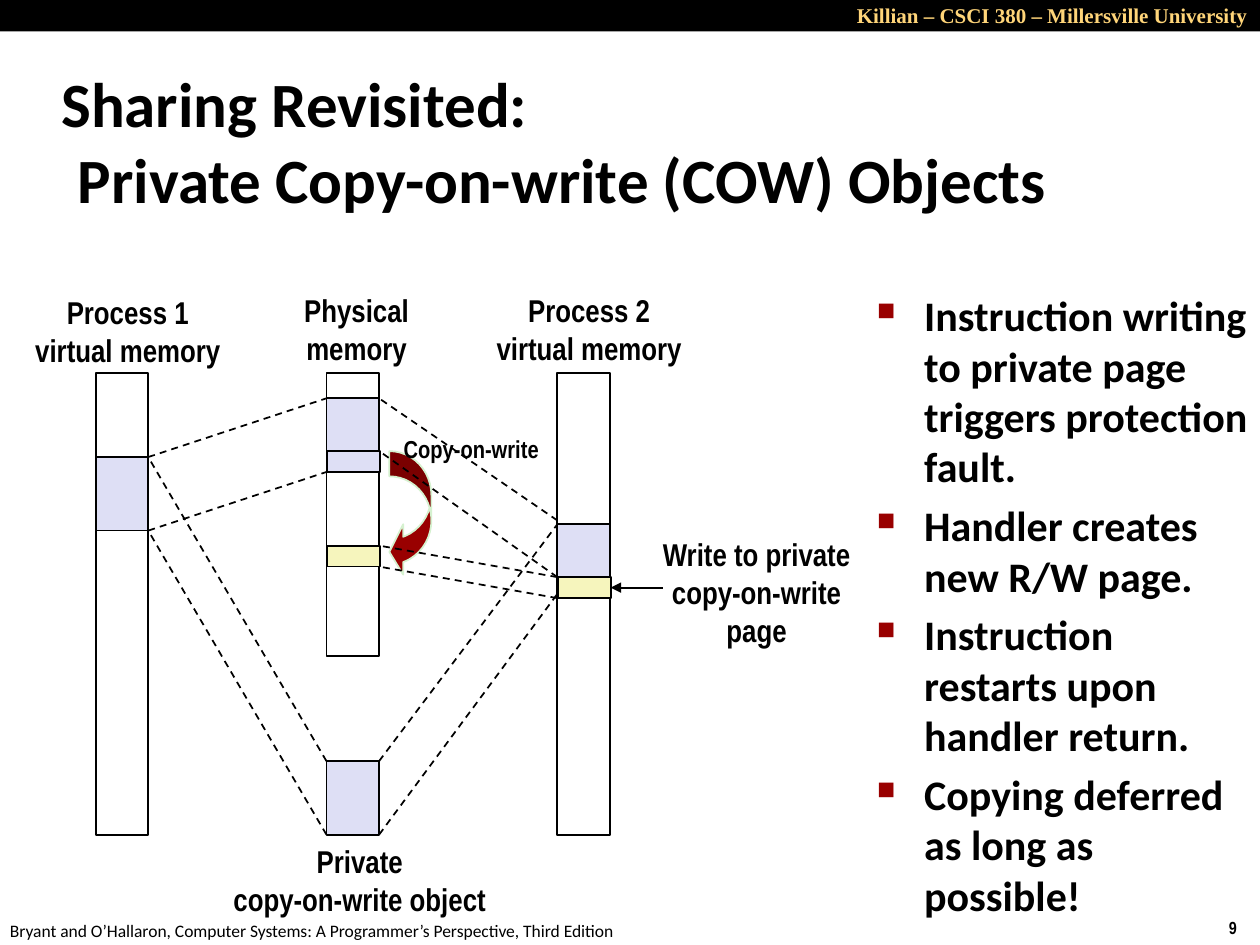
from lxml.etree import SubElement
from pptx import Presentation
from pptx.dml.color import RGBColor
from pptx.enum.dml import MSO_LINE
from pptx.enum.shapes import MSO_CONNECTOR, MSO_SHAPE
from pptx.enum.text import MSO_ANCHOR, PP_ALIGN
from pptx.oxml.ns import qn
from pptx.util import Pt

BLACK, LAVENDER, YELLOW, RED = "000000", "DEDFF5", "F6F5BD", "990000"
LEFT, CENTER, RIGHT = PP_ALIGN.LEFT, PP_ALIGN.CENTER, PP_ALIGN.RIGHT


def add_text(box, lines, size, font_name="Arial Narrow", bold=True,
             align=CENTER, anchor=MSO_ANCHOR.MIDDLE, color=BLACK, wrap=False):
    """Add a text box with one paragraph per line and return its paragraphs."""
    frame = slide.shapes.add_textbox(*map(Pt, box)).text_frame
    frame.word_wrap = wrap
    frame.vertical_anchor = anchor
    for index, line in enumerate(lines):
        paragraph = frame.add_paragraph() if index else frame.paragraphs[0]
        paragraph.alignment = align
        for part_index, part in enumerate(line.split("\n")):
            if part_index:
                paragraph.add_line_break()
            run = paragraph.add_run()
            run.text = part
            run.font.name = font_name
            run.font.size = Pt(size)
            run.font.bold = bold
            run.font.color.rgb = RGBColor.from_string(color)
    return frame.paragraphs


def add_block(box, fill=None, line=BLACK, kind=MSO_SHAPE.RECTANGLE):
    shape = slide.shapes.add_shape(kind, *map(Pt, box))
    shape.shadow.inherit = False
    if fill:
        shape.fill.solid()
        shape.fill.fore_color.rgb = RGBColor.from_string(fill)
    else:
        shape.fill.background()
    if line:
        shape.line.color.rgb = RGBColor.from_string(line)
        shape.line.width = Pt(1)
    else:
        shape.line.fill.background()
    return shape


presentation = Presentation()
presentation.slide_width, presentation.slide_height = Pt(720), Pt(540)
slide = presentation.slides.add_slide(presentation.slide_layouts[6])

# Header and footer
add_block((0, 0, 720, 18), BLACK, None)
add_text((444, -2, 276, 21.6), ["Killian – CSCI 380 – Millersville University"], 12,
         "Times New Roman", align=RIGHT, anchor=MSO_ANCHOR.TOP, color="FFD579", wrap=True)
add_text((695.2, 520.6, 24.8, 19.4), ["9"], 10, align=LEFT, anchor=MSO_ANCHOR.TOP)
add_text((-1.4, 522, 365.8, 19.4),
         ["Bryant and O’Hallaron, Computer Systems: A Programmer’s Perspective, Third Edition"],
         10, "Calibri", bold=False, align=LEFT, anchor=MSO_ANCHOR.TOP)

# Title with hanging indent
title = add_text((28, 34.5, 598, 91.5),
                 ["Sharing Revisited:\nPrivate Copy-on-write (COW) Objects"],
                 36, "Calibri", align=LEFT, wrap=True)[0]
title_properties = title._p.get_or_add_pPr()
title_properties.set("marL", str(Pt(9.5)))
title_properties.set("indent", str(Pt(-9.5)))

# Bulleted explanation
steps = [
    "Instruction writing to private page triggers protection fault.",
    "Handler creates new R/W page.",
    "Instruction restarts upon handler return.",
    "Copying deferred as long as possible!",
]
for paragraph in add_text((494, 162, 226, 355), steps, 24, "Calibri", align=LEFT,
                          anchor=MSO_ANCHOR.TOP, wrap=True):
    paragraph.space_before = Pt(4.8)
    properties = paragraph._p.get_or_add_pPr()
    properties.set("marL", str(Pt(27)))
    properties.set("indent", str(Pt(-27)))
    bullet_color = SubElement(properties, qn("a:buClr"))
    SubElement(bullet_color, qn("a:srgbClr"), val=RED)
    SubElement(properties, qn("a:buSzPct"), val="60000")
    SubElement(properties, qn("a:buChar"), char="■")

# Memory columns with their mapped regions
COLUMN_WIDTH, REGION_HEIGHT, PAGE_HEIGHT = 30, 42, 12
COLUMN_TOP = 213
process_1, physical, process_2 = 54.7, 186.6, 318.5
object_top = 435
for left, height in ((physical, 162), (process_1, 264), (process_2, 264)):
    add_block((left, COLUMN_TOP, COLUMN_WIDTH, height))
for left, top in ((physical, object_top), (physical, 227.6),
                  (process_1, 261.2), (process_2, 299.6)):
    add_block((left, top, COLUMN_WIDTH, REGION_HEIGHT), LAVENDER)

# Column labels
add_text((12.2, 163.5, 121.7, 51), ["Process 1", "virtual memory"], 18)
add_text((166.3, 162.5, 74.9, 51), ["Physical", "memory"], 18)
add_text((275.8, 162.5, 121.7, 51), ["Process 2", "virtual memory"], 18)
add_text((125.3, 477.4, 160.6, 51), ["Private", "copy-on-write object"], 18)

# Copy-on-write arrow and the pages involved
copy_arrow = add_block((222.5, 257.8, 24, 72), RED, "D5F1CF", MSO_SHAPE.CURVED_LEFT_ARROW)
for index, value in enumerate((0.6, 1.2, 0.33)):
    copy_arrow.adjustments[index] = value
add_text((223.2, 244.1, 92.2, 24.5), ["Copy-on-write"], 14)
for left, top, fill in ((physical, 257.7, LAVENDER), (process_2, 329.8, YELLOW),
                        (physical, 311.8, YELLOW)):
    add_block((left + 0.5, top, COLUMN_WIDTH, PAGE_HEIGHT), fill)
add_text((370.8, 301.7, 123.1, 72.7), ["Write to private", "copy-on-write", "page"], 18)

# Mapping lines, then the arrow to the written page
process_1_right = process_1 + COLUMN_WIDTH
physical_right = physical + COLUMN_WIDTH
object_bottom = object_top + REGION_HEIGHT
written_page = (378.7, 335.8, 349, 335.8)
connections = [
    (physical, object_top, process_1_right, 261.2),
    (physical, object_bottom, process_1_right, 303.2),
    (physical_right, object_top, process_2, 299.6),
    (physical_right, object_bottom, process_2, 339.4),
    (process_1_right, 261.2, physical, 227.6),
    (process_1_right, 303.2, physical, 269.7),
    (process_2, 297.4, physical_right, 227.6),
    (process_2, 329.8, physical_right, 257.7),
    (process_2, 329.8, physical_right, 311.8),
    (process_2, 341.8, physical_right, 323.8),
    written_page,
]
for ends in connections:
    connector = slide.shapes.add_connector(MSO_CONNECTOR.STRAIGHT, *map(Pt, ends))
    connector.line.color.rgb = RGBColor.from_string(BLACK)
    connector.line.width = Pt(1)
    if ends == written_page:
        SubElement(connector.line._get_or_add_ln(), qn("a:tailEnd"), type="triangle")
    else:
        connector.line.dash_style = MSO_LINE.DASH
    SubElement(connector._element.spPr, qn("a:effectLst"))

presentation.save("out.pptx")
